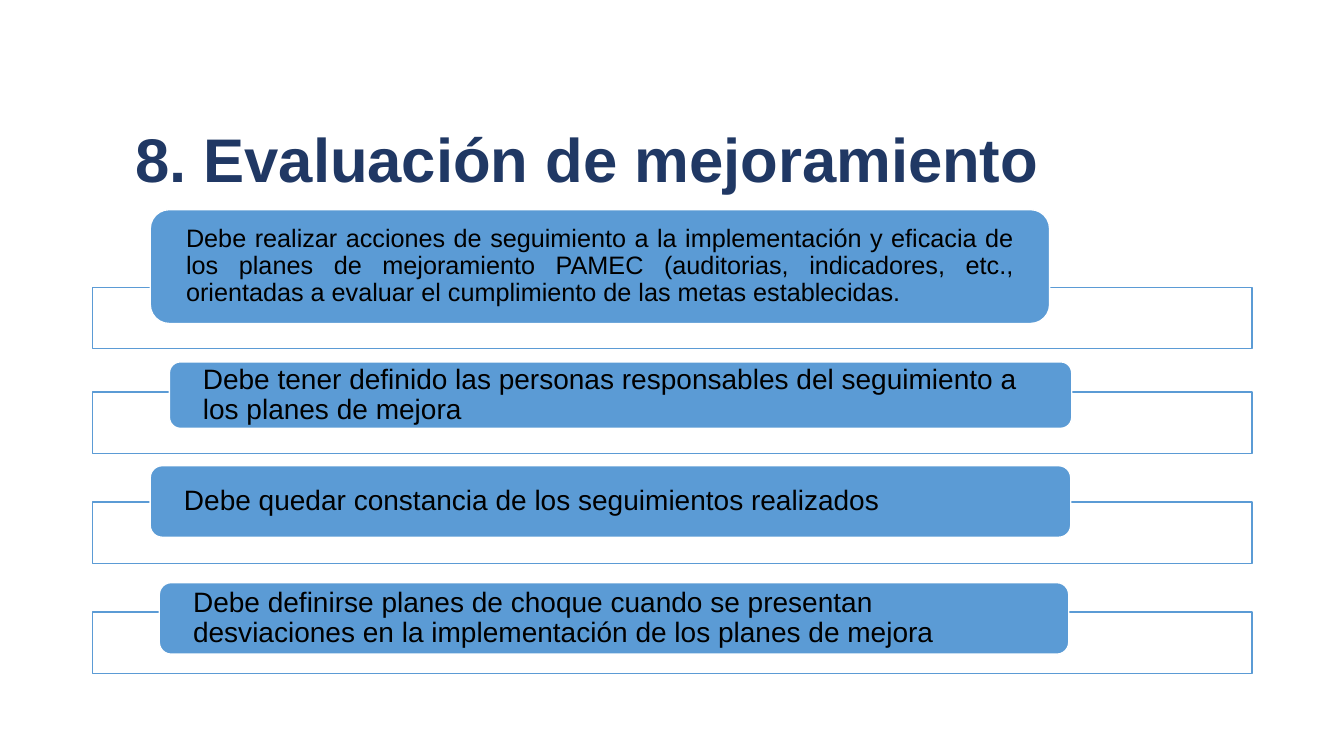
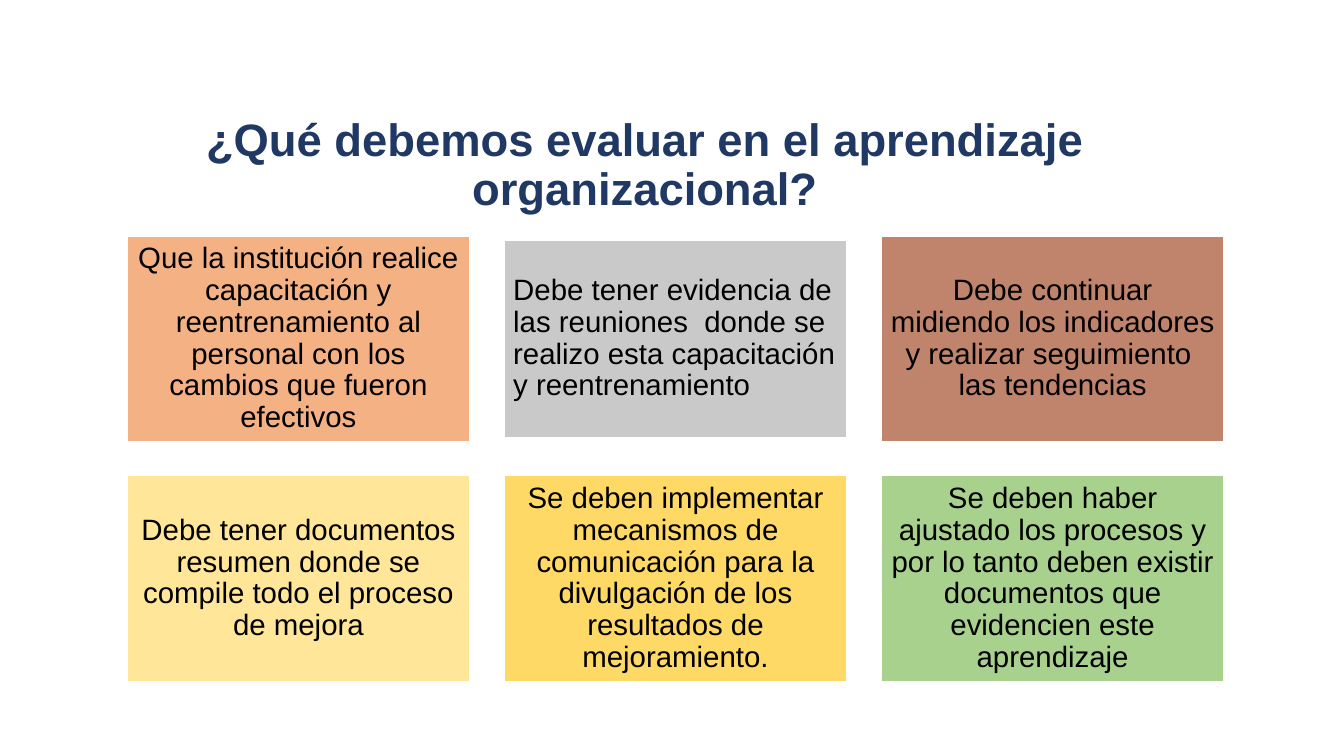
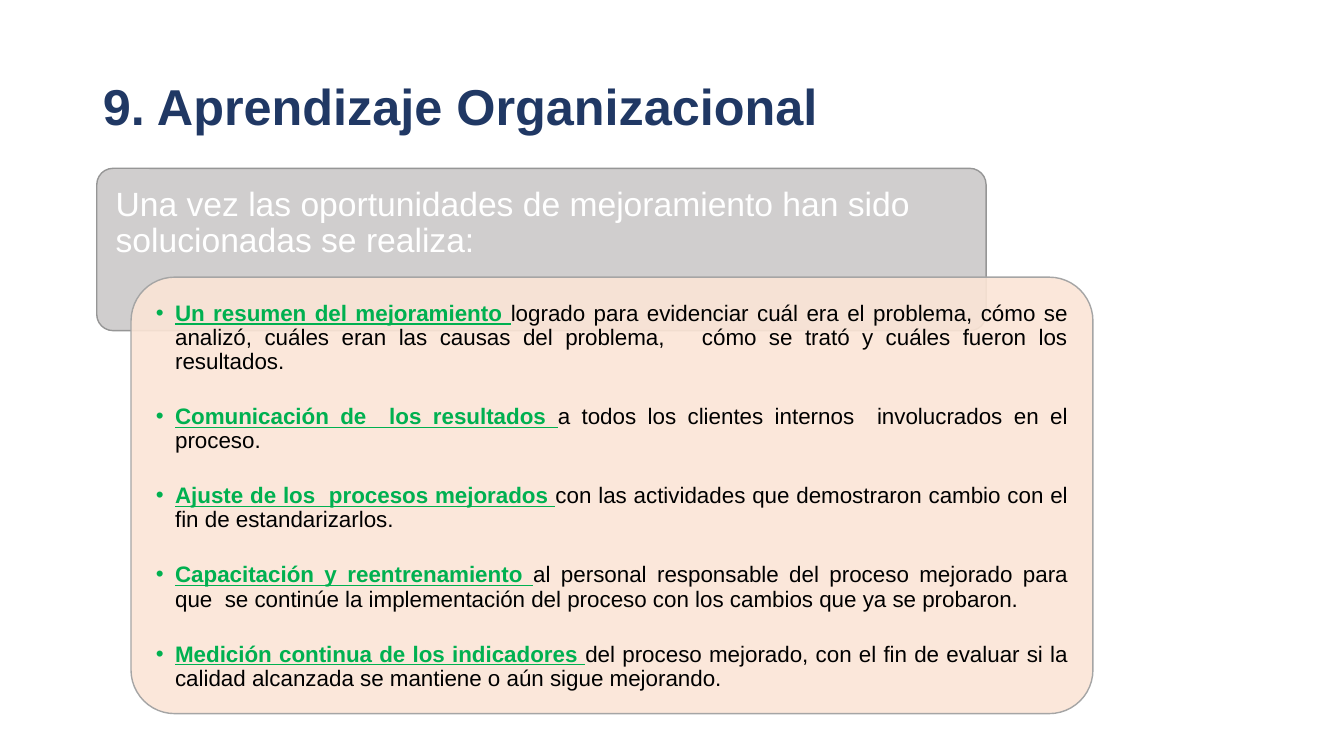
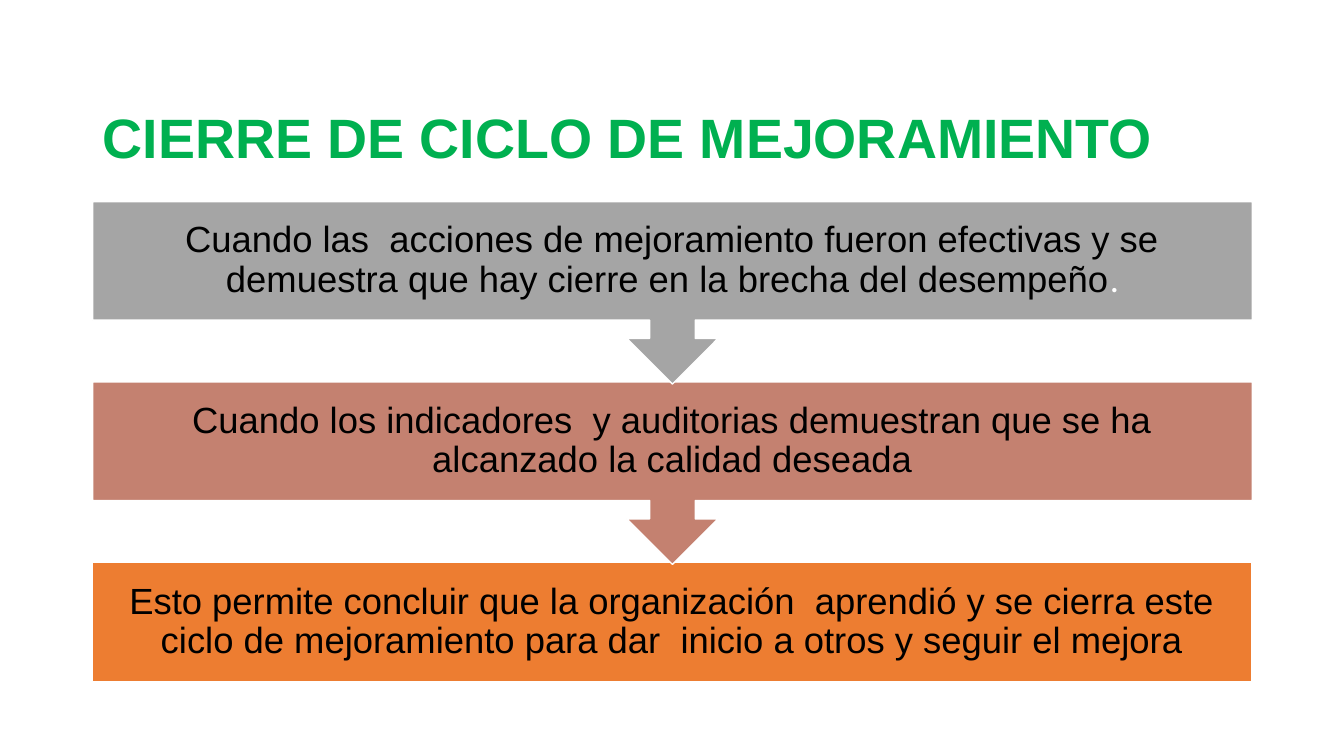
from dataclasses import dataclass

from lxml.etree import SubElement
from pptx import Presentation
from pptx.dml.color import RGBColor
from pptx.enum.shapes import MSO_SHAPE as Shape
from pptx.enum.text import MSO_ANCHOR as Anchor, MSO_AUTO_SIZE as AutoSize, PP_ALIGN as Align
from pptx.oxml.ns import qn
from pptx.util import Inches, Pt


@dataclass(frozen=True)
class Theme:
    font: str = "Arial"
    accent_font: str = "Calibri"
    line_spacing: float = 0.9
    navy: str = "203864"
    green: str = "00B050"
    black: str = "000000"
    white: str = "FFFFFF"
    blue: str = "5B9BD5"
    gray: str = "A5A5A5"
    silver: str = "C9C9C9"
    warm_gray: str = "D0CECE"
    outline_gray: str = "969696"
    brown: str = "C0836C"
    rose: str = "C48170"
    orange: str = "ED7D31"
    peach: str = "F4B183"
    pale_peach: str = "FBE5D6"
    cream: str = "FFE699"
    yellow: str = "FFD966"
    light_green: str = "A9D18E"
    list_size: float = 16
    small_size: float = 18
    body_size: float = 20
    card_size: float = 21
    intro_size: float = 24
    step_size: float = 26


THEME = Theme()


def format_runs(paragraph, size, color, bold=False, underline=False):
    for run in paragraph.runs:
        format_run(run, size, color, bold, underline)


def format_run(run, size, color, bold=False, underline=False, font=THEME.font):
    run.font.name = font
    run.font.size = Pt(size)
    run.font.bold = bold
    run.font.underline = underline
    run.font.color.rgb = RGBColor.from_string(color)


def add_title_slide(presentation, title, box, size, color=THEME.navy, align=Align.LEFT):
    """Add a title-only slide with its title placed in box."""
    slide = presentation.slides.add_slide(presentation.slide_layouts[5])
    placeholder = slide.shapes.title
    placeholder.left, placeholder.top, placeholder.width, placeholder.height = map(Inches, box)
    frame = placeholder.text_frame
    frame.text = title
    frame.auto_size = AutoSize.NONE
    frame.vertical_anchor = Anchor.MIDDLE
    paragraph = frame.paragraphs[0]
    paragraph.alignment = align
    paragraph.line_spacing = THEME.line_spacing
    format_runs(paragraph, size, color, bold=True)
    return slide


def add_box(slide, kind, box, fill, line=THEME.white, radius=None, opacity=None):
    shape = slide.shapes.add_shape(kind, *map(Inches, box))
    shape.shadow.inherit = False
    shape.fill.solid()
    shape.fill.fore_color.rgb = RGBColor.from_string(fill)
    shape.line.color.rgb = RGBColor.from_string(line)
    shape.line.width = Pt(1)
    if radius is not None:
        shape.adjustments[0] = radius
    if opacity is not None:
        color = shape.element.spPr.find(qn("a:solidFill"))[0]
        SubElement(color, qn("a:alpha")).set("val", str(opacity * 1000))
    return shape


def set_frame(shape, margins, anchor=Anchor.MIDDLE):
    """Set the margins (left, top, right, bottom) and the anchor of a shape's text."""
    frame = shape.text_frame
    frame.word_wrap = True
    frame.vertical_anchor = anchor
    frame.margin_left, frame.margin_top, frame.margin_right, frame.margin_bottom = map(Inches, margins)
    return frame


def write(shape, text, size, margins, align=Align.LEFT, color=THEME.black, anchor=Anchor.MIDDLE):
    frame = set_frame(shape, margins, anchor)
    frame.text = text
    paragraph = frame.paragraphs[0]
    paragraph.alignment = align
    paragraph.line_spacing = THEME.line_spacing
    format_runs(paragraph, size, color)
    return paragraph


def add_bullet(paragraph, indent):
    properties = paragraph._p.get_or_add_pPr()
    properties.set("marL", str(Inches(indent)))
    properties.set("indent", str(-Inches(indent)))
    SubElement(properties, qn("a:buFont")).set("typeface", THEME.font)
    SubElement(properties, qn("a:buChar")).set("char", "•")


def write_bullets(shape, items, gap):
    """Write (lead, rest) pairs as bullets, with the lead emphasised."""
    frame = set_frame(shape, (0.12,) * 4, Anchor.TOP)
    for index, (lead, rest) in enumerate(items):
        paragraph = frame.add_paragraph() if index else frame.paragraphs[0]
        add_bullet(paragraph, 0.19)
        paragraph.alignment = Align.JUSTIFY
        paragraph.line_spacing = THEME.line_spacing
        if index:
            paragraph.space_before = Pt(gap)
        paragraph.text = lead
        format_runs(paragraph, THEME.list_size, THEME.green, bold=True, underline=True)
        run = paragraph.add_run()
        run.text = rest
        format_run(run, THEME.list_size, THEME.black)


def build_evaluation(presentation):
    slide = add_title_slide(presentation, "8. Evaluación de mejoramiento", (1.24, 1.21, 11.5, 0.8), 44)
    rows = [
        (2.85, (1.49, 2.08, 8.92, 1.13), THEME.small_size, Align.JUSTIFY,
         "Debe realizar acciones de seguimiento a la implementación y eficacia de los planes de "
         "mejoramiento PAMEC (auditorias, indicadores, etc., orientadas a evaluar el cumplimiento "
         "de las metas establecidas."),
        (3.89, (1.68, 3.59, 8.95, 0.66), THEME.body_size, Align.LEFT,
         "Debe tener definido las personas responsables del seguimiento a los planes de mejora"),
        (4.98, (1.49, 4.62, 9.13, 0.71), THEME.body_size, Align.LEFT,
         "Debe quedar constancia de los seguimientos realizados"),
        (6.07, (1.58, 5.78, 9.02, 0.71), THEME.body_size, Align.LEFT,
         "Debe definirse planes de choque cuando se presentan desviaciones en la implementación "
         "de los planes de mejora"),
    ]
    for frame_top, label_box, size, align, text in rows:
        add_box(slide, Shape.RECTANGLE, (0.92, frame_top, 11.5, 0.61), THEME.white, THEME.blue)
        label = add_box(slide, Shape.ROUNDED_RECTANGLE, label_box, THEME.blue)
        write(label, text, size, (0.3, 0, 0.3, 0), align)


def build_learning_questions(presentation):
    slide = add_title_slide(
        presentation, "¿Qué debemos evaluar en el aprendizaje organizacional?",
        (0.39, 1.15, 12.01, 1), 32.4, align=Align.CENTER)
    # Colour, alignment, vertical inset, text
    cards = [
        (THEME.peach, Align.CENTER, 0,
         "Que la institución realice capacitación y reentrenamiento al personal con los cambios "
         "que fueron efectivos"),
        (THEME.silver, Align.LEFT, 0.04,
         "Debe tener evidencia de las reuniones  donde se realizo esta capacitación y reentrenamiento"),
        (THEME.brown, Align.CENTER, 0,
         "Debe continuar midiendo los indicadores y realizar seguimiento  las tendencias"),
        (THEME.cream, Align.CENTER, 0,
         "Debe tener documentos resumen donde se compile todo el proceso de mejora"),
        (THEME.yellow, Align.CENTER, 0,
         "Se deben implementar mecanismos de comunicación para la divulgación de los resultados "
         "de mejoramiento."),
        (THEME.light_green, Align.CENTER, 0,
         "Se deben haber ajustado los procesos y por lo tanto deben existir documentos que "
         "evidencien este aprendizaje"),
    ]
    width, height, gap = 3.4, 2.04, 0.34
    for index, (fill, align, inset, text) in enumerate(cards):
        row, column = divmod(index, 3)
        left = 1.26 + column * (width + gap)
        top = 2.34 + row * (height + gap)
        card = add_box(slide, Shape.RECTANGLE, (left, top + inset, width, height - 2 * inset), fill)
        write(card, text, THEME.card_size, (0.09,) * 4, align)


def build_organizational_learning(presentation):
    slide = add_title_slide(presentation, "9. Aprendizaje Organizacional", (0.92, 0.76, 11.5, 0.65), 36)
    intro = add_box(slide, Shape.ROUNDED_RECTANGLE, (0.96, 1.67, 8.82, 1.61),
                    THEME.warm_gray, THEME.outline_gray, radius=0.1)
    write(intro, "Una vez las oportunidades de mejoramiento han sido solucionadas se realiza:",
          THEME.intro_size, (0.14, 0.14, 0.14, 0.1), color=THEME.white, anchor=Anchor.TOP)
    activities = add_box(slide, Shape.ROUNDED_RECTANGLE, (1.3, 2.75, 9.54, 4.33),
                         THEME.pale_peach, THEME.gray, radius=0.1, opacity=90)
    write_bullets(activities, [
        ("Un resumen del mejoramiento ",
         "logrado para evidenciar cuál era el problema, cómo se analizó, cuáles eran las causas "
         "del problema,   cómo se trató y cuáles fueron los resultados."),
        ("Comunicación de  los resultados ",
         "a todos los clientes internos  involucrados en el proceso."),
        ("Ajuste de los  procesos mejorados ",
         "con las actividades que demostraron cambio con el fin de estandarizarlos."),
        ("Capacitación y reentrenamiento ",
         "al personal responsable del proceso mejorado para que  se continúe la implementación "
         "del proceso con los cambios que ya se probaron."),
        ("Medición continua de los indicadores ",
         "del proceso mejorado, con el fin de evaluar si la calidad alcanzada se mantiene o aún "
         "sigue mejorando."),
    ], gap=22)


def build_cycle_closure(presentation):
    slide = add_title_slide(presentation, "CIERRE DE CICLO DE MEJORAMIENTO",
                            (0.92, 0.99, 11.5, 0.8), 39.6, THEME.green)
    steps = [
        (Shape.DOWN_ARROW_CALLOUT, 1.81, THEME.gray,
         "Cuando las  acciones de mejoramiento fueron efectivas y se demuestra que hay cierre "
         "en la brecha del desempeño"),
        (Shape.DOWN_ARROW_CALLOUT, 1.81, THEME.rose,
         "Cuando los indicadores  y auditorias demuestran que se ha alcanzado la calidad deseada"),
        (Shape.RECTANGLE, 1.18, THEME.orange,
         "Esto permite concluir que la organización  aprendió y se cierra este ciclo de "
         "mejoramiento para dar  inicio a otros y seguir el mejora"),
    ]
    # The last step lies at the back, so each arrow tip covers the step below it.
    for index, (kind, height, fill, text) in reversed(list(enumerate(steps))):
        step = add_box(slide, kind, (0.92, 2 + index * 1.79, 11.5, height), fill)
        paragraph = write(step, text, THEME.step_size, (0.2,) * 4, Align.CENTER)
    full_stop = paragraph.add_run()
    full_stop.text = "."
    format_run(full_stop, THEME.step_size, THEME.white, font=THEME.accent_font)


def main():
    presentation = Presentation()
    presentation.slide_width = Inches(13.33)
    presentation.slide_height = Inches(7.5)
    build_evaluation(presentation)
    build_learning_questions(presentation)
    build_organizational_learning(presentation)
    build_cycle_closure(presentation)
    presentation.save("out.pptx")


if __name__ == "__main__":
    main()
